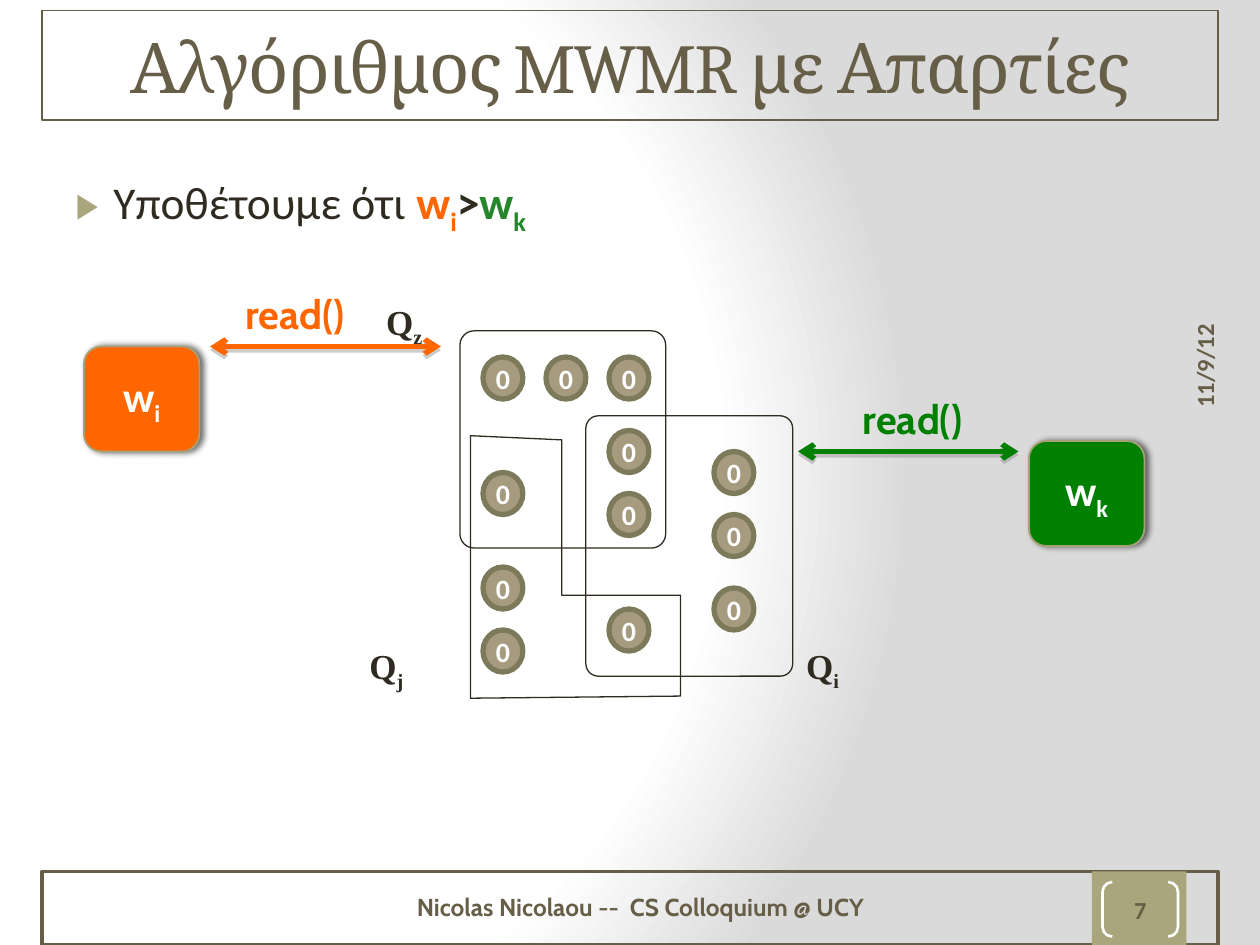
from lxml import etree
from pptx import Presentation, util as u
from pptx.dml.color import RGBColor
from pptx.enum import shapes, text
from pptx.oxml import parse_xml
from pptx.oxml.ns import nsdecls, qn

COLORS = {
    "brown": "675E47", "olive": "A9A57C", "ink": "2F2B20", "white": "FFFFFF",
    "server": "A69B7E", "server_edge": "7D7A5C", "writer_edge": "A6A278",
    "orange": "FF6600", "green": "008000", "leaf": "26862B",
    "grey": "DADADA", "shade": "808080", "black": "000000",
}
SHAPE = shapes.MSO_SHAPE
CENTER = text.PP_ALIGN.CENTER
MIDDLE = text.MSO_ANCHOR.MIDDLE


def rgb(name):
    return RGBColor.from_string(COLORS[name])


def grid(count):
    """Length of a number of grid steps; the slide is 120 columns by 90 rows."""
    return u.Inches(count / 12)


class SlideBuilder:
    def __init__(self, presentation, layout):
        self.slide = presentation.slides.add_slide(layout)
        self.title, self.body = self.slide.placeholders

    def background(self):
        stops = "".join(
            f'<a:gs pos="{position}000"><a:srgbClr val="{COLORS[name]}"/></a:gs>'
            for position, name in ((0, "white"), (75, "white"), (100, "grey")))
        self.slide.element.cSld.insert(0, parse_xml(
            f'<p:bg {nsdecls("p", "a")}><p:bgPr><a:gradFill rotWithShape="1">'
            f'<a:gsLst>{stops}</a:gsLst><a:path path="circle">'
            '<a:fillToRect l="20000" t="50000" r="100000" b="50000"/></a:path>'
            '</a:gradFill><a:effectLst/></p:bgPr></p:bg>'))

    def place(self, shape, at):
        shape.left, shape.top, shape.width, shape.height = map(grid, at)

    def paint(self, shape, fill=None, line=None, weight=1):
        if fill:
            shape.fill.solid()
            shape.fill.fore_color.rgb = rgb(fill)
        else:
            shape.fill.background()
        if line:
            shape.line.color.rgb = rgb(line)
            shape.line.width = u.Pt(weight)
        else:
            shape.line.fill.background()

    def set_text(self, shape, parts, size, font="Calibri", bold=True, align=None,
                 anchor=None, wrap=True):
        """Each part is (words, color), with "sub" added for a subscript."""
        frame = shape.text_frame
        frame.word_wrap = wrap
        frame.auto_size = text.MSO_AUTO_SIZE.NONE
        frame.vertical_anchor = anchor
        paragraph = frame.paragraphs[0]
        paragraph.alignment = align
        for words, color, *sub in parts:
            run = paragraph.add_run()
            run.text = words
            run.font.name, run.font.size = font, u.Pt(size)
            run.font.bold, run.font.color.rgb = bold, rgb(color)
            if sub:
                run.font._element.set("baseline", "-25000")
        return paragraph

    def shape(self, kind, at, fill=None, line=None, weight=1, adjust=None):
        shape = self.slide.shapes.add_shape(kind, *map(grid, at))
        shape.shadow.inherit = False
        self.paint(shape, fill, line, weight)
        if adjust:
            shape.adjustments[0] = adjust
        return shape

    def label(self, at, parts, size, **style):
        box = self.slide.shapes.add_textbox(*map(grid, at))
        self.set_text(box, parts, size, **style)
        return box

    def outline(self, points, line, weight):
        start, *rest = [(grid(x), grid(y)) for x, y in points]
        builder = self.slide.shapes.build_freeform(*start)
        builder.add_line_segments(rest, close=True)
        shape = builder.convert_to_shape()
        shape.shadow.inherit = False
        self.paint(shape, None, line, weight)

    def shadow(self, properties, color, alpha, blur, distance, angle):
        for old in properties.findall(qn("a:effectLst")):
            properties.remove(old)
        properties.append(parse_xml(
            f'<a:effectLst {nsdecls("a")}><a:outerShdw blurRad="{u.Pt(blur)}" '
            f'dist="{u.Pt(distance)}" dir="{angle * 60000}" rotWithShape="0">'
            f'<a:srgbClr val="{COLORS[color]}"><a:alpha val="{alpha}000"/>'
            '</a:srgbClr></a:outerShdw></a:effectLst>'))

    def double_arrow(self, start, end, color):
        arrow = self.slide.shapes.add_connector(
            shapes.MSO_CONNECTOR.STRAIGHT, *map(grid, start + end))
        arrow.line.color.rgb = rgb(color)
        arrow.line.width = u.Pt(3)
        for tag in ("a:headEnd", "a:tailEnd"):
            etree.SubElement(arrow.line._ln, qn(tag), type="arrow")
        self.shadow(arrow._element.spPr, "shade", 40, 0, 2, 90)

    def bullet(self, paragraph, color):
        properties = paragraph._p.get_or_add_pPr()
        properties.set("marL", str(u.Inches(0.3)))
        properties.set("indent", str(-u.Inches(0.3)))
        for xml in (f'<a:buClr {nsdecls("a")}><a:srgbClr val="{COLORS[color]}"/></a:buClr>',
                    f'<a:buSzPct {nsdecls("a")} val="76000"/>',
                    f'<a:buChar {nsdecls("a")} char="▶"/>'):
            properties.append(parse_xml(xml))

    def writer(self, at, name, color):
        box = self.shape(SHAPE.ROUNDED_RECTANGLE, at + (11, 10), color, "writer_edge")
        self.shadow(box._element.spPr, "black", 60, 4, 2, 0)
        self.set_text(box, [("w", "white"), (name, "white", "sub")], 24,
                      align=CENTER, anchor=MIDDLE)

    def server(self, column, row):
        circle = self.shape(SHAPE.OVAL, (column, row, 3.8, 4), "server", "server_edge", 3)
        self.set_text(circle, [("0", "white")], 16, align=CENTER, anchor=MIDDLE, wrap=False)


def main():
    presentation = Presentation()
    presentation.slide_width, presentation.slide_height = grid(120), grid(90)
    page = SlideBuilder(presentation, presentation.slide_layouts[1])
    page.background()

    # Title
    page.place(page.title, (4, 1, 112, 10.4))
    page.paint(page.title, None, "brown")
    heading = page.set_text(page.title, [("Αλγόριθμος MWMR με Απαρτίες", "brown")], 40,
                            font="Cambria", bold=False, align=CENTER, anchor=MIDDLE)
    heading.runs[0].font._element.set("spc", "-100")

    # Assumption
    page.place(page.body, (6, 16, 108, 8))
    assumption = page.set_text(page.body, [
        ("Υποθέτουμε ότι ", "ink"), ("w", "orange"), ("i", "orange", "sub"),
        (">", "ink"), ("w", "leaf"), ("k", "leaf", "sub")], 26)
    assumption.runs[0].font.bold = False
    assumption.space_before = u.Pt(6)
    page.bullet(assumption, "olive")

    # Footer band, page number and date
    page.shape(SHAPE.RECTANGLE, (4, 83, 112, 7), None, "brown", 2)
    page.shape(SHAPE.RECTANGLE, (104, 83, 9, 7), "olive")
    page.label((35, 84, 52, 4.8), [("Nicolas Nicolaou --  CS Colloquium @ UCY", "brown")],
               14, font="Cabin", align=CENTER, anchor=MIDDLE)
    number = page.shape(SHAPE.DOUBLE_BRACKET, (105, 84, 7.2, 5.2), None, "white", 1.5, 0.18)
    page.set_text(number, [("7", "brown")], 14, align=CENTER, anchor=MIDDLE)
    frame = number.text_frame
    frame.margin_left = frame.margin_right = frame.margin_top = frame.margin_bottom = 0
    date = page.label((99.1, 21.6, 32, 4.8), [("11/9/12", "brown")], 14)
    date.rotation = 270

    # Quorums
    for at, adjust in (((43.8, 31.5, 19.6, 20.7), 0.07), ((55.8, 39.6, 19.7, 24.8), 0.06)):
        page.shape(SHAPE.ROUNDED_RECTANGLE, at, None, "ink", 0.75, adjust)
    page.outline([(44.8, 41.5), (44.8, 66.5), (64.8, 66.3), (64.8, 56.7),
                  (53.5, 56.7), (53.5, 41.9)], "ink", 0.75)
    for column, row, name in ((35.6, 28, "z"), (75.6, 60.8, "i"), (34, 60.8, "j")):
        page.label((column, row, 7.3, 5.2), [("Q", "ink"), (name, "ink", "sub")], 20,
                   font="Times New Roman")

    # Servers, by column
    servers = {46: (34, 45, 54, 60), 52: (34,), 58: (34, 41, 47, 58), 68: (43, 49, 56)}
    for column, rows in servers.items():
        for row in rows:
            page.server(column, row)

    # Writers and their reads
    for at, name, color, start, end, call in (
            ((8, 33), "i", "orange", (20, 33), (42, 33), (22.2, 27)),
            ((98, 42), "k", "green", (97, 43), (76, 43), (81, 37))):
        page.writer(at, name, color)
        page.double_arrow(start, end, color)
        page.label(call + (12.7, 5.9), [("read()", color)], 23, font="Cabin", wrap=False)

    presentation.save("out.pptx")


if __name__ == "__main__":
    main()
